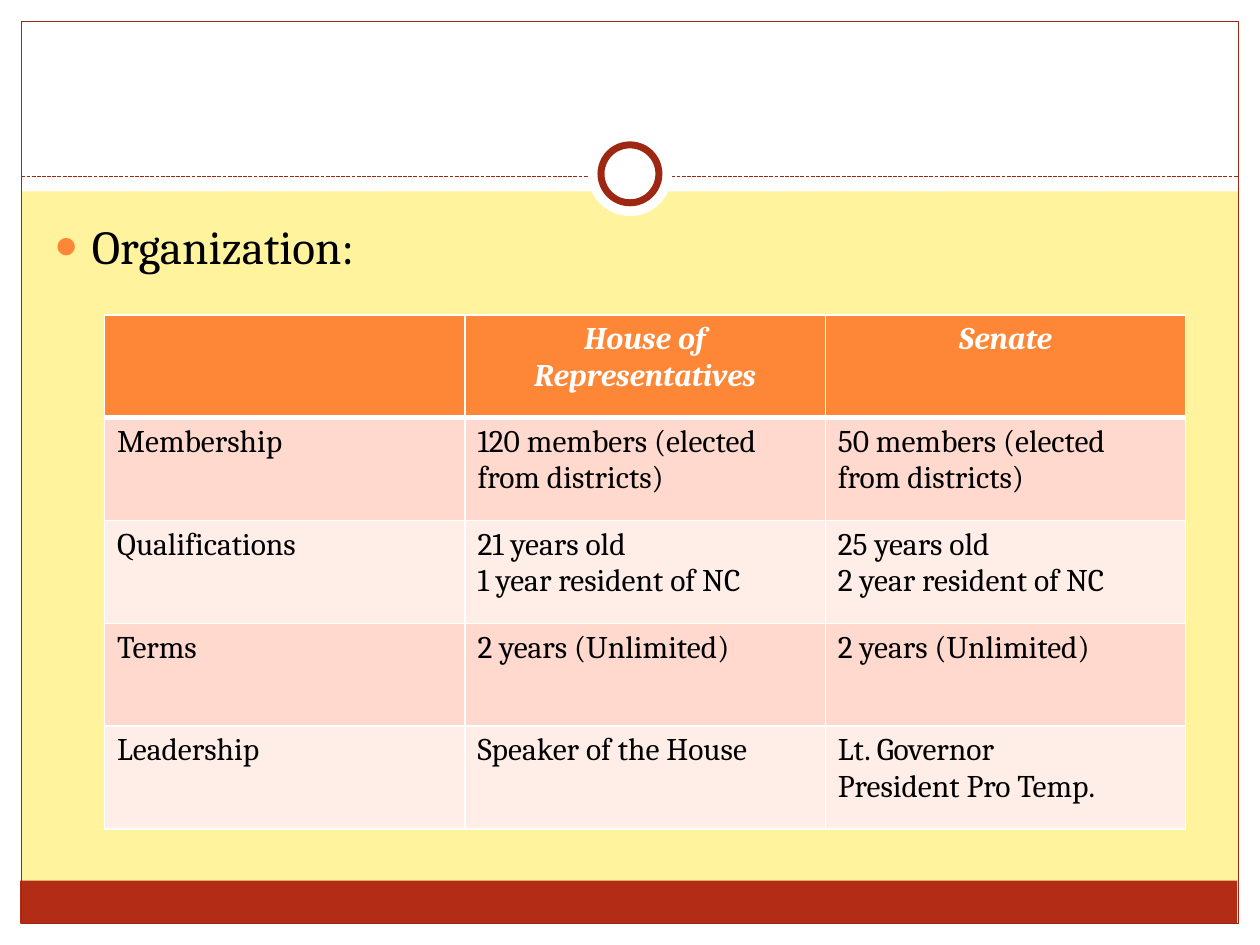
from dataclasses import dataclass

from lxml.etree import SubElement
from pptx import Presentation
from pptx.dml.color import RGBColor
from pptx.enum.dml import MSO_LINE_DASH_STYLE as Dash
from pptx.enum.shapes import MSO_CONNECTOR, MSO_SHAPE as Shape
from pptx.enum.text import PP_ALIGN as Align
from pptx.oxml.ns import qn
from pptx.util import Pt

PX = 9144  # 100 px to the inch


@dataclass(frozen=True)
class Theme:
    font: str = "Cambria"
    background: str = "FFF39D"
    white: str = "FFFFFF"
    black: str = "000000"
    band: str = "B32C16"
    rule: str = "9E2713"
    accent: str = "FE8637"
    row_fills: tuple = ("FFD9CE", "FFEDE8")
    body_size: int = 27
    table_size: int = 18


THEME = Theme()

HEADING = ["Organization:"]
HEADER = [[], ["House of Representatives"], ["Senate"]]
ROWS = [
    [["Membership"], ["120 members (elected from districts)"],
     ["50 members (elected from districts)"]],
    [["Qualifications"], ["21 years old", "1 year resident of NC"],
     ["25 years old", "2 year resident of NC"]],
    [["Terms"], ["2 years (Unlimited)"], ["2 years (Unlimited)"]],
    [["Leadership"], ["Speaker of the House"],
     ["Lt. Governor", "President Pro Temp."]],
]

# Boxes are left, top, width, height in px
MARGINS = [(0, 733, 1000, 17), (0, 0, 1000, 152), (0, 0, 17, 750), (983, 0, 17, 750)]
BAND_BOX = (16, 699, 966, 34)
FRAME_BOX = (17, 17, 966, 716)
DIVIDER_Y = 140
CIRCLE_CENTER = (500, 138)
BODY_BOX = (33, 167, 930, 500)
TABLE_BOX = (83, 250, 858, 408)


def emu(*lengths):
    return [round(length * PX) for length in lengths]


def rgb(color):
    return RGBColor.from_string(color)


def add_shape(slide, kind, box, fill=None, line=None, weight=0.75):
    shape = slide.shapes.add_shape(kind, *emu(*box))
    shape.shadow.inherit = False
    if fill:
        shape.fill.solid()
        shape.fill.fore_color.rgb = rgb(fill)
    else:
        shape.fill.background()
    if line:
        shape.line.color.rgb = rgb(line)
        shape.line.width = Pt(weight)
    else:
        shape.line.fill.background()


def add_circle(slide, diameter, **style):
    x, y = CIRCLE_CENTER
    box = (x - diameter / 2, y - diameter / 2, diameter, diameter)
    add_shape(slide, Shape.OVAL, box, **style)


def add_divider(slide):
    left, _, width, _ = FRAME_BOX
    line = slide.shapes.add_connector(
        MSO_CONNECTOR.STRAIGHT, *emu(left, DIVIDER_Y, left + width, DIVIDER_Y))
    line.line.color.rgb = rgb(THEME.rule)
    line.line.width = Pt(0.75)
    line.line.dash_style = Dash.SQUARE_DOT
    SubElement(line._element.spPr, qn("a:effectLst"))


def write(frame, lines, size, color=THEME.black, bold=False, italic=False, align=Align.LEFT):
    for index, text in enumerate(lines):
        paragraph = frame.add_paragraph() if index else frame.paragraphs[0]
        paragraph.alignment = align
        run = paragraph.add_run()
        run.text = text
        font = run.font
        font.name, font.size, font.bold, font.italic = THEME.font, Pt(size), bold, italic
        font.color.rgb = rgb(color)


def add_bullet(paragraph, indent):
    properties = paragraph._p.get_or_add_pPr()
    properties.set("marL", str(indent * PX))
    properties.set("indent", str(-indent * PX))
    color = SubElement(properties, qn("a:buClr"))
    SubElement(color, qn("a:srgbClr"), val=THEME.accent)
    SubElement(properties, qn("a:buSzPct"), val="85000")
    SubElement(properties, qn("a:buFont"), typeface="Arial")
    SubElement(properties, qn("a:buChar"), char="●")


def set_borders(cell, bottom):
    """Draw white borders, one point wide except at the bottom."""
    properties = cell._tc.get_or_add_tcPr()
    widths = {"a:lnL": 1, "a:lnR": 1, "a:lnT": 1, "a:lnB": bottom}
    for index, (side, width) in enumerate(widths.items()):
        line = SubElement(properties, qn(side), w=str(Pt(width)))
        fill = SubElement(line, qn("a:solidFill"))
        SubElement(fill, qn("a:srgbClr"), val=THEME.white)
        properties.insert(index, line)


def add_comparison(slide):
    row_count, column_count = len(ROWS) + 1, len(HEADER)
    table = slide.shapes.add_table(row_count, column_count, *emu(*TABLE_BOX)).table
    for r, row in enumerate([HEADER, *ROWS]):
        header = r == 0
        fill = THEME.accent if header else THEME.row_fills[(r - 1) % 2]
        for c, lines in enumerate(row):
            cell = table.cell(r, c)
            cell.fill.solid()
            cell.fill.fore_color.rgb = rgb(fill)
            set_borders(cell, bottom=3 if header else 1)
            write(cell.text_frame, lines, THEME.table_size,
                  color=THEME.white if header else THEME.black,
                  bold=header, italic=header,
                  align=Align.CENTER if header else Align.LEFT)


def main():
    presentation = Presentation()
    presentation.slide_width, presentation.slide_height = emu(1000, 750)
    slide = presentation.slides.add_slide(presentation.slide_layouts[1])
    slide.background.fill.solid()
    slide.background.fill.fore_color.rgb = rgb(THEME.background)
    title, body = slide.placeholders
    title._element.getparent().remove(title._element)

    for box in MARGINS:
        add_shape(slide, Shape.RECTANGLE, box, fill=THEME.white)
    add_shape(slide, Shape.RECTANGLE, BAND_BOX, fill=THEME.band)
    add_shape(slide, Shape.RECTANGLE, FRAME_BOX, line=THEME.rule)
    add_divider(slide)
    add_circle(slide, 67, fill=THEME.white)
    add_circle(slide, 46, fill=THEME.white, line=THEME.rule, weight=4)

    body.left, body.top, body.width, body.height = emu(*BODY_BOX)
    write(body.text_frame, HEADING, THEME.body_size)
    add_bullet(body.text_frame.paragraphs[0], indent=30)
    add_comparison(slide)
    presentation.save("out.pptx")


if __name__ == "__main__":
    main()
